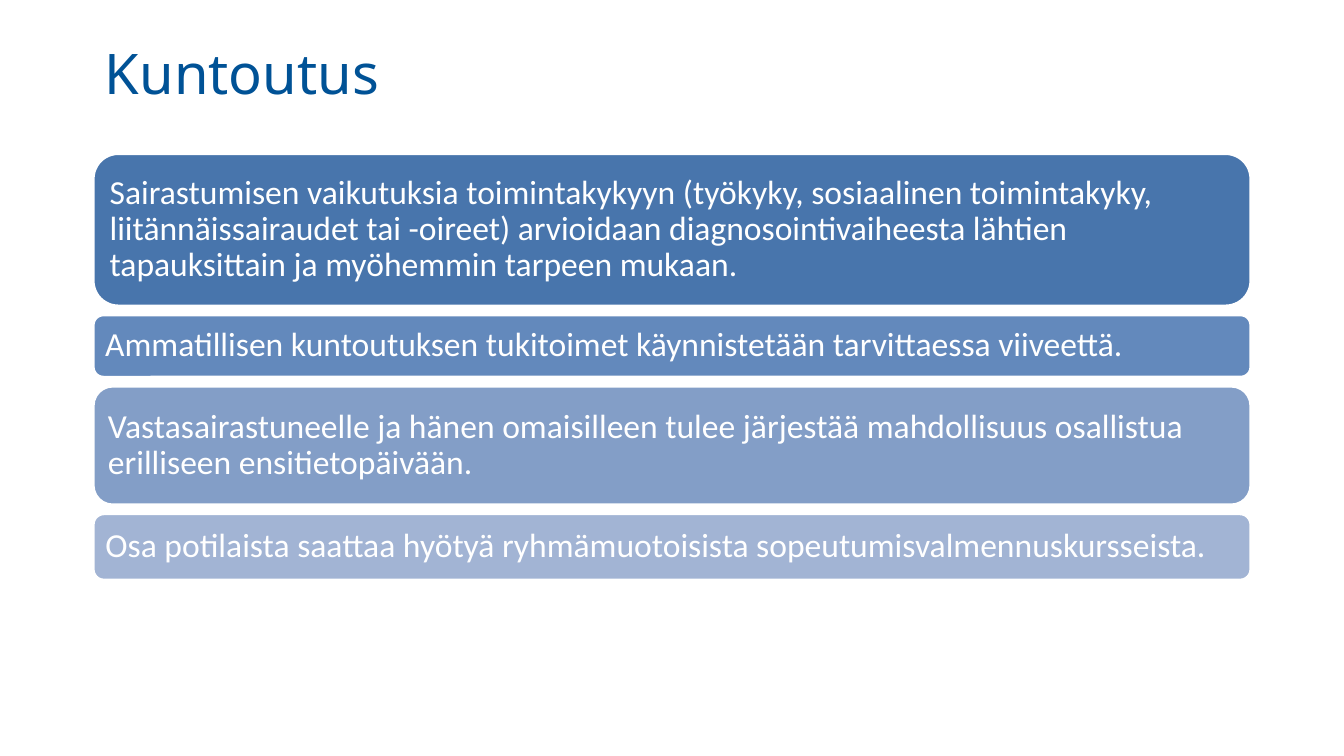
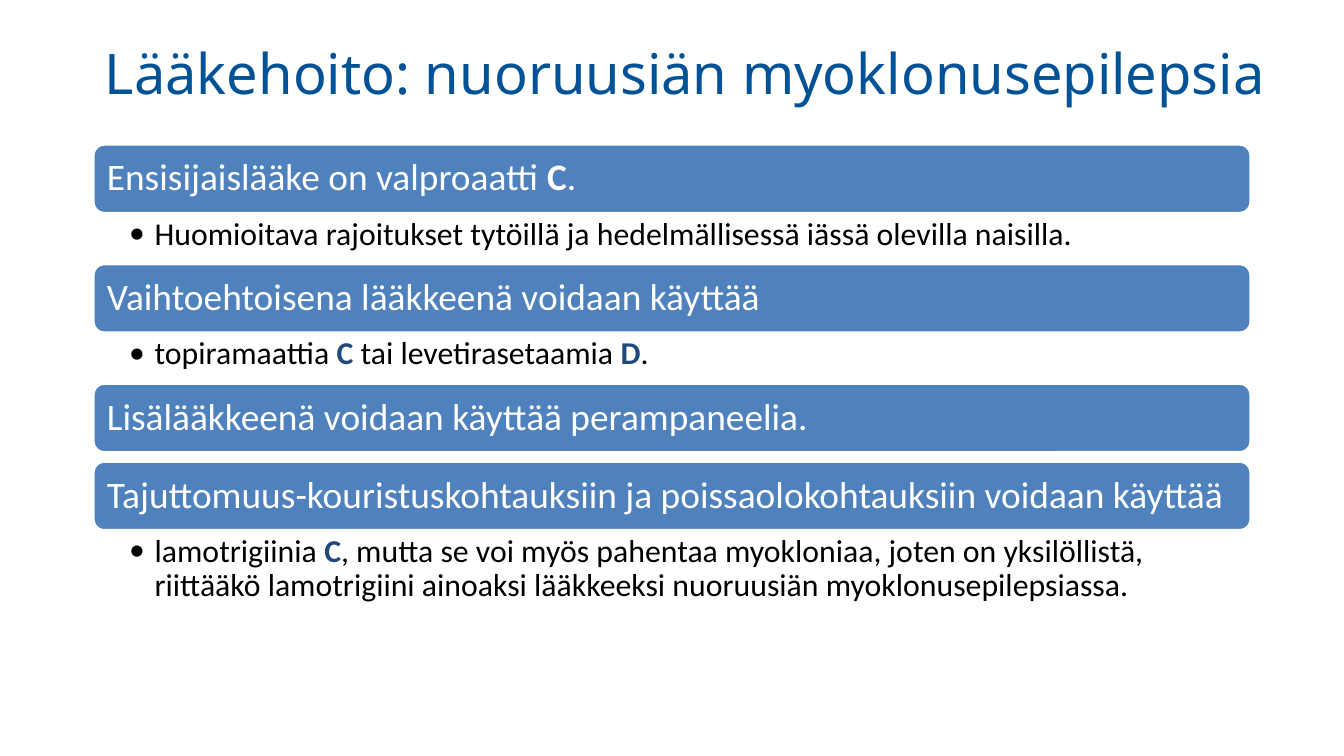
from dataclasses import dataclass

from lxml import etree
from pptx import Presentation
from pptx import util as u
from pptx.dml.color import RGBColor
from pptx.enum import shapes, text
from pptx.oxml.ns import qn

PX = 9144  # EMU: 100 px to the inch
LEFT, WIDE, GAP = 69, 862, 6
HARD = chr(160)  # no-break space, typed as ~ in the texts
HUES = {
    "title": "005296", "white": "FFFFFF", "black": "000000", "navy": "1F497D",
    "bar": "4F81BD", "deep": "4875AC", "mid": "6389BC", "soft": "839EC7",
    "pale": "A2B4D4",
}


@dataclass(frozen=True)
class Style:
    name: str
    size: int
    hue: str
    bold: str  # hue of the marked words
    pad: tuple[int, int, int, int]  # left, top, right, bottom
    mid: bool = False
    dot: bool = False
    lead: float = 0.9


@dataclass(frozen=True)
class Bar:
    label: str
    high: int
    fill: str = "bar"
    note: str = ""
    drop: int = 36  # height of the note


@dataclass(frozen=True)
class Page:
    title: str
    wide: int
    high: int
    top: int
    style: Style
    bars: tuple[Bar, ...]


HEAD = Style("Noto Sans", 30, "title", "title", (9, 5, 9, 5), lead=1.0)
PLAIN = Style("Calibri", 18, "white", "white", (7, 7, 7, 7), mid=True)
LARGE = Style("Calibri", 20, "white", "white", (8, 8, 8, 8), mid=True)
NOTE = Style("Calibri", 17, "black", "navy", (27, 2, 13, 2), dot=True)

PAGES = (
    Page("Kuntoutus", 862, 61, 114, PLAIN, (
        Bar("Sairastumisen vaikutuksia toimintakykyyn (työkyky, sosiaalinen "
            "toimintakyky, liitännäissairaudet tai -oireet) arvioidaan "
            "diagnosointivaiheesta lähtien tapauksittain ja myöhemmin "
            "tarpeen mukaan.", 114, "deep"),
        Bar("Ammatillisen kuntoutuksen tukitoimet käynnistetään "
            "tarvittaessa viiveettä.", 47, "mid"),
        Bar("Vastasairastuneelle ja hänen omaisilleen tulee järjestää "
            "mahdollisuus osallistua erilliseen ensitietopäivään.", 89, "soft"),
        Bar("Osa potilaista saattaa hyötyä ryhmämuotoisista "
            "sopeutumisvalmennuskursseista.", 50, "pale"),
    )),
    Page("Lääkehoito: nuoruusiän myoklonusepilepsia", 915, 111, 107, LARGE, (
        Bar("Ensisijaislääke on valproaatti~*C*.", 52,
            note="Huomioitava rajoitukset tytöillä ja hedelmällisessä "
                 "iässä olevilla naisilla."),
        Bar("Vaihtoehtoisena lääkkeenä voidaan käyttää", 52,
            note="topiramaattia *C*~tai levetirasetaamia~*D*."),
        Bar("Lisälääkkeenä voidaan käyttää perampaneelia.", 52),
        Bar("Tajuttomuus-kouristuskohtauksiin ja poissaolokohtauksiin "
            "voidaan käyttää", 52,
            note="lamotrigiinia *C*, mutta se voi myös pahentaa myokloniaa, "
                 "joten on yksilöllistä, riittääkö lamotrigiini ainoaksi "
                 "lääkkeeksi nuoruusiän myoklonusepilepsiassa.", drop=58),
    )),
)


def tint(hue: str) -> RGBColor:
    return RGBColor.from_string(HUES[hue])


def bullet(para, face: str) -> None:
    para.level = 1
    prop = para._p.get_or_add_pPr()
    prop.set("marL", str(19 * PX))
    prop.set("indent", str(-19 * PX))
    etree.SubElement(prop, qn("a:buFont")).set("typeface", face)
    etree.SubElement(prop, qn("a:buChar")).set("char", "•")


def write(shape, words: str, style: Style) -> None:
    """Fill the shape with one paragraph; words between asterisks are bold."""
    frame = shape.text_frame
    left, top, right, low = (u.Emu(n * PX) for n in style.pad)
    form = {
        "word_wrap": True,
        "margin_left": left, "margin_top": top,
        "margin_right": right, "margin_bottom": low,
        "vertical_anchor": (text.MSO_ANCHOR.MIDDLE if style.mid
                            else text.MSO_ANCHOR.TOP),
    }
    for key, val in form.items():
        setattr(frame, key, val)
    para = frame.paragraphs[0]
    para.alignment = text.PP_ALIGN.LEFT
    para.line_spacing = style.lead
    if style.dot:
        bullet(para, style.name)
    for i, part in enumerate(words.replace("~", HARD).split("*")):
        run = para.add_run()
        run.text = part
        strong = i % 2 == 1
        face = {"name": style.name, "size": u.Pt(style.size), "bold": strong}
        for key, val in face.items():
            setattr(run.font, key, val)
        run.font.color.rgb = tint(style.bold if strong else style.hue)


def place(left: int, top: int, wide: int, high: int) -> list[u.Emu]:
    return [u.Emu(n * PX) for n in (left, top, wide, high)]


def box(slide, area: list[u.Emu], words: str, style: Style) -> None:
    write(slide.shapes.add_textbox(*area), words, style)


def band(slide, top: int, bar: Bar, style: Style) -> None:
    shape = slide.shapes.add_shape(
        shapes.MSO_SHAPE.ROUNDED_RECTANGLE, *place(LEFT, top, WIDE, bar.high))
    shape.shadow.inherit = False
    shape.fill.solid()
    shape.fill.fore_color.rgb = tint(bar.fill)
    shape.line.color.rgb = tint("white")
    shape.line.width = u.Pt(2)
    write(shape, bar.label, style)


def draw(slide, page: Page) -> None:
    """Stack the bars downward, each followed by its note or a gap."""
    box(slide, place(LEFT, 24, page.wide, page.high), page.title, HEAD)
    top = page.top
    for bar in page.bars:
        band(slide, top, bar, page.style)
        top += bar.high
        if bar.note:
            box(slide, place(LEFT, top + 1, WIDE, bar.drop), bar.note, NOTE)
        top += bar.drop + 1 if bar.note else GAP


def main() -> None:
    deck = Presentation()
    deck.slide_width = u.Emu(1000 * PX)
    deck.slide_height = u.Emu(1000 * PX * 9 // 16)
    for page in PAGES:
        draw(deck.slides.add_slide(deck.slide_layouts[6]), page)
    deck.save("out.pptx")


if __name__ == "__main__":
    main()
